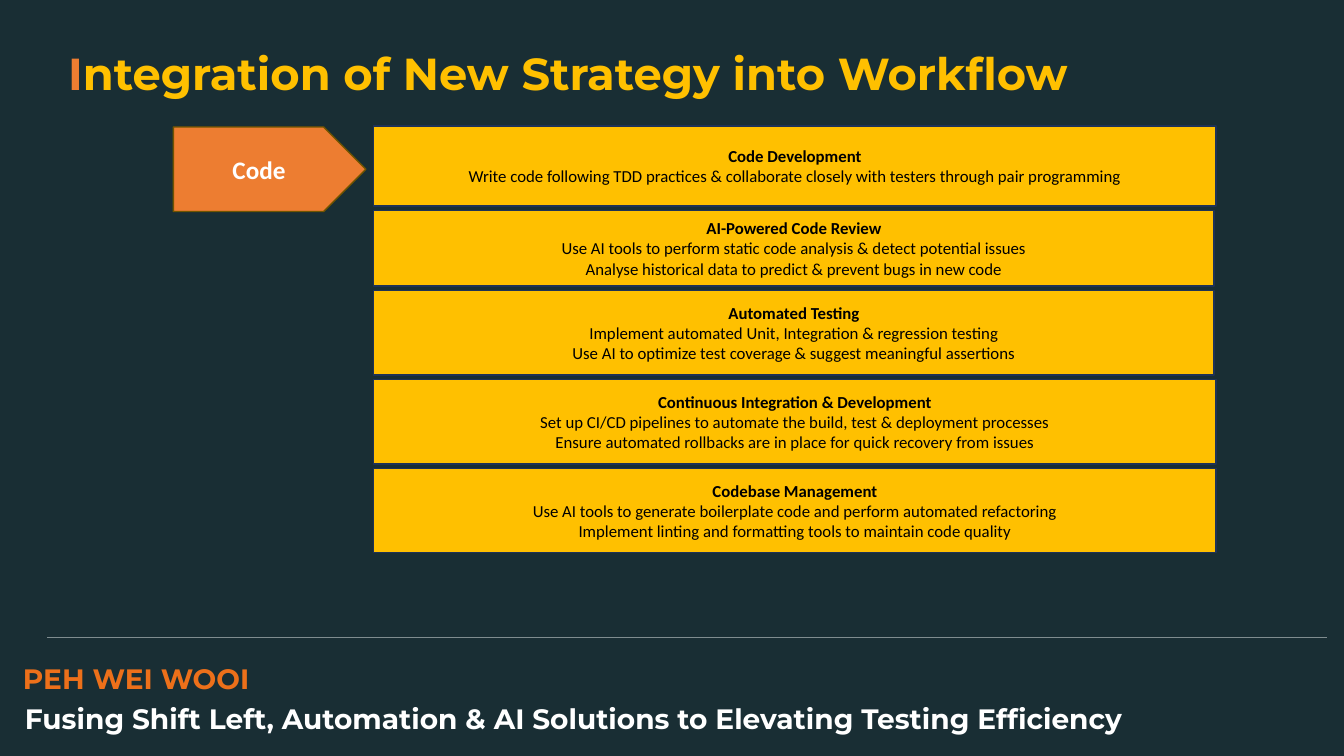
from dataclasses import dataclass

from lxml.etree import SubElement
from pptx import Presentation
from pptx.dml.color import RGBColor
from pptx.enum.shapes import MSO_CONNECTOR, MSO_SHAPE
from pptx.enum.text import MSO_ANCHOR, PP_ALIGN
from pptx.oxml.ns import qn
from pptx.slide import Slide
from pptx.text.text import TextFrame, _Paragraph
from pptx.util import Cm, Pt

COLOURS = {
    "background": "192E34",
    "amber": "FFC000",
    "orange": "ED7D31",
    "presenter": "ED701A",
    "rule": "7F8C8F",
    "navy": "1E3256",
    "brown": "705400",
    "white": "FFFFFF",
    "black": "000000",
}
HEADING_FONT = "Montserrat"
BODY_FONT = "Calibri"
STEP_LEFT = 9.42
STEP_TOP = 3.18
STEP_GAP = 0.11


@dataclass(frozen=True)
class Step:
    title: str
    details: tuple[str, ...]
    height: float = 2.13
    width: float = 21.23


@dataclass(frozen=True)
class Heading:
    spans: tuple[tuple[str, str], ...]
    left: float
    top: float
    width: float
    height: float
    size: int = 20
    line_spacing: float = 0.9


STEPS = (
    Step(
        "Code Development",
        ("Write code following TDD practices & collaborate closely with testers through pair programming",),
        height=2.01,
    ),
    Step(
        "AI-Powered Code Review",
        (
            "Use AI tools to perform static code analysis & detect potential issues",
            "Analyse historical data to predict & prevent bugs in new code",
        ),
        height=1.91,
        width=21.18,
    ),
    Step(
        "Automated Testing",
        (
            "Implement automated Unit, Integration & regression testing",
            "Use AI to optimize test coverage & suggest meaningful assertions",
        ),
        width=21.18,
    ),
    Step(
        "Continuous Integration & Development",
        (
            "Set up CI/CD pipelines to automate the build, test & deployment processes",
            "Ensure automated rollbacks are in place for quick recovery from issues",
        ),
    ),
    Step(
        "Codebase Management",
        (
            "Use AI tools to generate boilerplate code and perform automated refactoring",
            "Implement linting and formatting tools to maintain code quality",
        ),
    ),
)

HEADINGS = (
    Heading(
        (("I", "orange"), ("ntegration of New Strategy into Workflow", "amber")),
        1.47, 1.04, 27.33, 1.63, size=32, line_spacing=1.0,
    ),
    Heading((("PEH WEI WOOI", "presenter"),), 0.33, 16.64, 12.09, 0.89),
    Heading(
        (("Fusing Shift Left, Automation & AI Solutions to Elevating Testing Efficiency", "white"),),
        0.38, 17.65, 28.8, 0.61,
    ),
)


def colour(name: str) -> RGBColor:
    return RGBColor.from_string(COLOURS[name])


def add_span(
    para: _Paragraph, text: str, *, font: str, size: int, fill: str, bold: bool = True
) -> None:
    span = para.add_run()
    span.text = text
    span.font.name = font
    span.font.size = Pt(size)
    span.font.bold = bold
    span.font.color.rgb = colour(fill)


def add_heading(page: Slide, heading: Heading) -> None:
    box = page.shapes.add_textbox(
        Cm(heading.left), Cm(heading.top), Cm(heading.width), Cm(heading.height)
    )
    box.text_frame.word_wrap = True
    para = box.text_frame.paragraphs[0]
    para.line_spacing = heading.line_spacing
    for text, fill in heading.spans:
        add_span(para, text, font=HEADING_FONT, size=heading.size, fill=fill)


def add_panel(
    page: Slide, kind: MSO_SHAPE, left: float, top: float, width: float, height: float,
    *, fill: str, outline: str,
) -> TextFrame:
    panel = page.shapes.add_shape(kind, Cm(left), Cm(top), Cm(width), Cm(height))
    panel.shadow.inherit = False
    panel.fill.solid()
    panel.fill.fore_color.rgb = colour(fill)
    panel.line.color.rgb = colour(outline)
    panel.line.width = Pt(1)
    frame = panel.text_frame
    frame.word_wrap = True
    frame.vertical_anchor = MSO_ANCHOR.MIDDLE
    frame.paragraphs[0].alignment = PP_ALIGN.CENTER
    return frame


def add_steps(page: Slide) -> None:
    top = STEP_TOP
    for step in STEPS:
        frame = add_panel(
            page, MSO_SHAPE.RECTANGLE, STEP_LEFT, top, step.width, step.height,
            fill="amber", outline="navy",
        )
        add_span(frame.paragraphs[0], step.title, font=BODY_FONT, size=12, fill="black")
        for detail in step.details:
            para = frame.add_paragraph()
            para.alignment = PP_ALIGN.CENTER
            add_span(para, detail, font=BODY_FONT, size=12, fill="black", bold=False)
        top += step.height + STEP_GAP


def add_footer_rule(page: Slide) -> None:
    rule = page.shapes.add_connector(
        MSO_CONNECTOR.STRAIGHT, Cm(1.19), Cm(16.05), Cm(33.43), Cm(16.05)
    )
    rule.line.color.rgb = colour("rule")
    rule.line.width = Pt(0.5)
    SubElement(rule._element.spPr, qn("a:effectLst"))


def main() -> None:
    deck = Presentation()
    deck.slide_width, deck.slide_height = Cm(33.87), Cm(19.05)
    page = deck.slides.add_slide(deck.slide_layouts[6])
    page.background.fill.solid()
    page.background.fill.fore_color.rgb = colour("background")
    add_footer_rule(page)
    for heading in HEADINGS:
        add_heading(page, heading)
    stage = add_panel(
        page, MSO_SHAPE.PENTAGON, 4.37, 3.2, 4.85, 2.13, fill="orange", outline="brown"
    )
    add_span(stage.paragraphs[0], "Code", font=BODY_FONT, size=18, fill="white")
    add_steps(page)
    deck.save("out.pptx")


if __name__ == "__main__":
    main()
